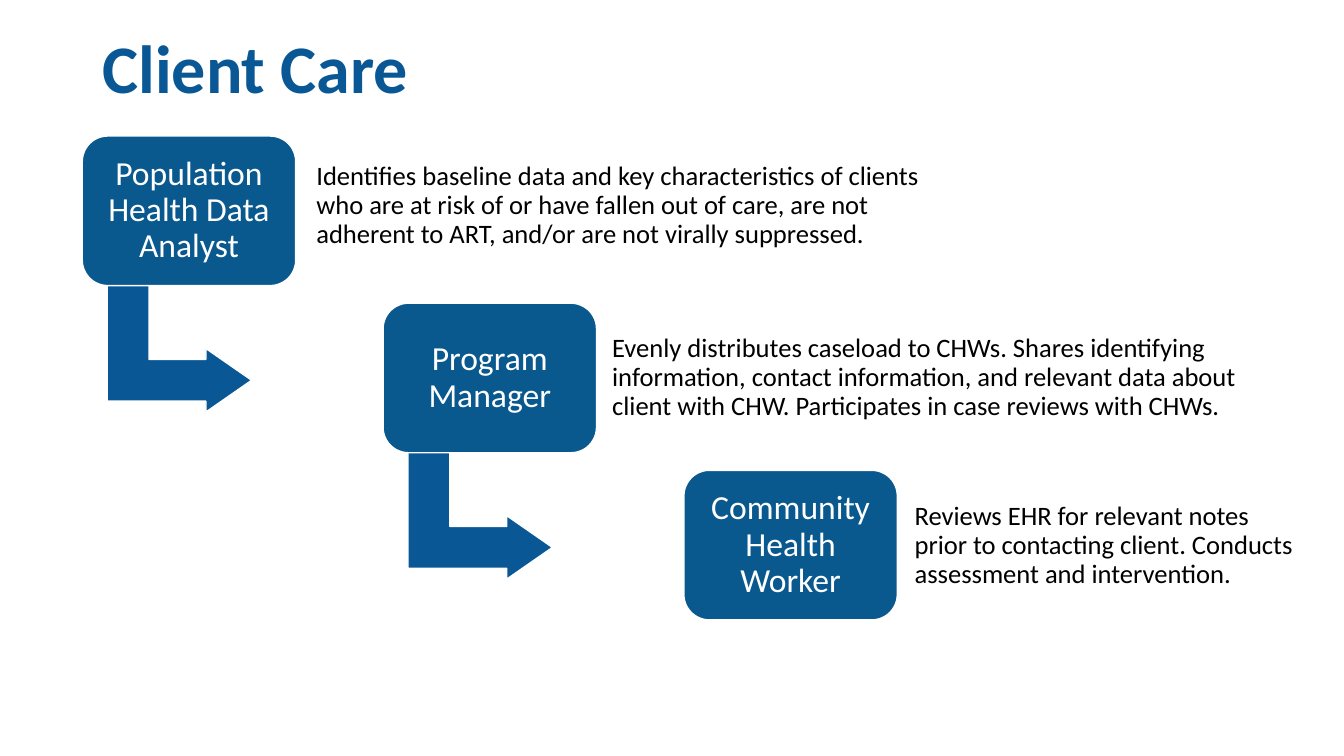
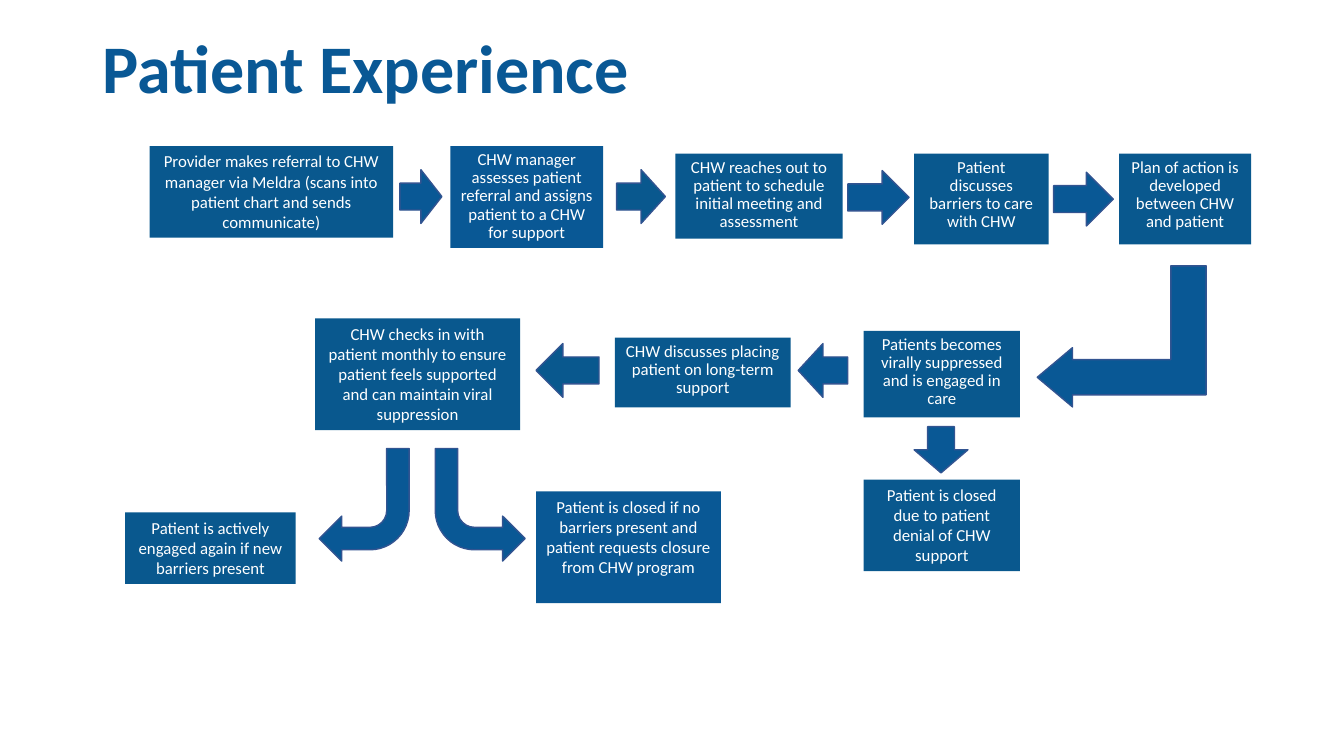
from pptx import Presentation
from pptx.dml.color import RGBColor
from pptx.enum.shapes import MSO_SHAPE as Shape
from pptx.enum.text import MSO_ANCHOR as Anchor, MSO_AUTO_SIZE as AutoSize, PP_ALIGN as Align
from pptx.util import Inches, Pt

BLUE = RGBColor(0x09, 0x58, 0x95)
DEEP_BLUE = RGBColor(0x09, 0x58, 0x8E)
OUTLINE_BLUE = RGBColor(0x32, 0x54, 0x91)
WHITE = RGBColor(0xFF, 0xFF, 0xFF)
BLACK = RGBColor(0x00, 0x00, 0x00)
FONT = "Calibri"

# The slide is a grid of 160 square columns by 90 rows
WIDTH, HEIGHT = Inches(13.33), Inches(7.5)
UNIT = HEIGHT / 90
TITLE_AREA = (11, 3.1, 138, 10.9)
TITLE_ONLY_LAYOUT = 5

# Staircase of roles: each stage sits one step right and down
STAGE_LEFT, STAGE_TOP = 9.8, 16.2
STAGE_WIDTH, STAGE_HEIGHT = 25.4, 17.8
STEP_X, STEP_Y = 35.8, 19.9
ROLES = [
    ("Population Health Data Analyst", (36.7, 17.3, 75.6, 14.4),
     "Identifies baseline data and key characteristics of clients who are at "
     "risk of or have fallen out of care, are not adherent to ART, and/or are "
     "not virally suppressed."),
    ("Program Manager", (71.9, 37.8, 79.6, 14.4),
     "Evenly distributes caseload to CHWs. Shares identifying information, "
     "contact information, and relevant data about client with CHW. "
     "Participates in case reviews with CHWs."),
    ("Community Health Worker", (107.9, 57.8, 48, 14.4),
     "Reviews EHR for relevant notes prior to contacting client. Conducts "
     "assessment and intervention."),
]

# Patient steps: area, fill, line spacing, text
PATIENT_STEPS = [
    ((17.8, 17.4, 29, 10.9), DEEP_BLUE, 1.0,
     "Provider makes referral to CHW manager via Meldra (scans into patient "
     "chart and sends communicate)"),
    ((53.6, 17.4, 18.2, 12.1), BLUE, 0.9,
     "CHW manager assesses patient referral and assigns patient to a CHW for support"),
    ((80.4, 18.3, 19.9, 10.1), DEEP_BLUE, 0.9,
     "CHW reaches out to patient to schedule initial meeting and assessment"),
    ((108.8, 18.3, 16, 10.8), DEEP_BLUE, 0.9,
     "Patient discusses barriers to care with CHW"),
    ((133.2, 18.3, 15.7, 10.8), DEEP_BLUE, 0.9,
     "Plan of action is developed between CHW and patient"),
    ((102.8, 39.4, 18.6, 10.3), DEEP_BLUE, 0.9,
     "Patients becomes virally suppressed and is engaged in care"),
    ((73.2, 40.2, 20.9, 8.3), DEEP_BLUE, 0.9,
     "CHW discusses placing patient on long-term support"),
    ((37.5, 37.9, 24.4, 13.3), DEEP_BLUE, 1.0,
     "CHW checks in with patient monthly to ensure patient feels supported "
     "and can maintain viral suppression"),
    ((102.8, 57.1, 18.6, 10.9), DEEP_BLUE, 1.0,
     "Patient is closed due to patient denial of CHW support"),
    ((63.8, 58.5, 22, 13.3), BLUE, 1.0,
     "Patient is closed if no barriers present and patient requests closure "
     "from CHW program"),
    ((14.9, 61, 20.3, 8.5), DEEP_BLUE, 1.0,
     "Patient is actively engaged again if new barriers present"),
]

# Straight block arrows: kind, area, fill
STRAIGHT_ARROWS = [
    (Shape.RIGHT_ARROW, (47.6, 20.2, 5, 6.4), BLUE),
    (Shape.RIGHT_ARROW, (73.4, 20.2, 5.8, 6.4), DEEP_BLUE),
    (Shape.RIGHT_ARROW, (100.9, 20.3, 7.3, 6.4), BLUE),
    (Shape.RIGHT_ARROW, (125.4, 20.5, 7.1, 6.4), BLUE),
    (Shape.LEFT_ARROW, (95, 40.9, 5.9, 6.4), BLUE),
    (Shape.LEFT_ARROW, (63.8, 40.9, 7.5, 6.4), DEEP_BLUE),
    (Shape.DOWN_ARROW, (108.8, 50.8, 6.4, 5.5), BLUE),
]


def grid(area):
    """Turn left, top, width and height in grid units into lengths."""
    return [round(value * UNIT) for value in area]


def write_text(shape, text, size, color, bold=False, align=Align.LEFT,
               anchor=Anchor.MIDDLE, spacing=0.9, insets=(0.1, 0.05)):
    """Fill a shape with one formatted paragraph; insets are side and top."""
    frame = shape.text_frame
    frame.word_wrap = True
    frame.auto_size = AutoSize.NONE
    frame.vertical_anchor = anchor
    frame.margin_left = frame.margin_right = Inches(insets[0])
    frame.margin_top = frame.margin_bottom = Inches(insets[1])
    frame.text = text
    paragraph = frame.paragraphs[0]
    paragraph.alignment = align
    paragraph.line_spacing = spacing
    font = paragraph.runs[0].font
    font.name, font.size, font.bold = FONT, Pt(size), bold
    font.color.rgb = color


def add_block(slide, kind, area, fill, line=None, adjustments=()):
    """Add a flat filled preset shape, outlined if a line colour is given."""
    shape = slide.shapes.add_shape(kind, *grid(area))
    shape.shadow.inherit = False
    shape.fill.solid()
    shape.fill.fore_color.rgb = fill
    if line is None:
        shape.line.fill.background()
    else:
        shape.line.color.rgb = line
        shape.line.width = Pt(1)
    for index, value in enumerate(adjustments):
        shape.adjustments[index] = value
    return shape


def flip(shape, *axes):
    """Mirror a shape along the named axes, H or V."""
    for axis in axes:
        shape.element.spPr.xfrm.set("flip" + axis, "1")


def add_titled_slide(presentation, text):
    slide = presentation.slides.add_slide(presentation.slide_layouts[TITLE_ONLY_LAYOUT])
    title = slide.shapes.title
    title.left, title.top, title.width, title.height = grid(TITLE_AREA)
    write_text(title, text, 48.6, BLUE, bold=True)
    return slide


def add_role(slide, index, name, description_area, description):
    """Add one stage of the staircase with its description."""
    left, top = STAGE_LEFT + index * STEP_X, STAGE_TOP + index * STEP_Y
    if index < len(ROLES) - 1:
        arrow = add_block(slide, Shape.BENT_UP_ARROW, (left + 4, top + 16.7, 15.1, 17.2),
                          BLUE, WHITE, (0.33, 0.25, 0.36))
        arrow.rotation = 90
    stage = add_block(slide, Shape.ROUNDED_RECTANGLE,
                      (left, top, STAGE_WIDTH, STAGE_HEIGHT), DEEP_BLUE, WHITE, (0.17,))
    write_text(stage, name, 24, WHITE, align=Align.CENTER, insets=(0.12, 0.12))
    box = slide.shapes.add_textbox(*grid(description_area))
    write_text(box, description, 19, BLACK, insets=(0.08, 0.08))


def build_client_care(presentation):
    slide = add_titled_slide(presentation, "Client Care")
    for index, role in enumerate(ROLES):
        add_role(slide, index, *role)


def build_patient_experience(presentation):
    slide = add_titled_slide(presentation, "Patient Experience")
    for area, fill, spacing, text in PATIENT_STEPS:
        step = add_block(slide, Shape.RECTANGLE, area, fill)
        write_text(step, text, 12, WHITE, align=Align.CENTER, anchor=Anchor.TOP,
                   spacing=spacing)
    for kind, area, fill in STRAIGHT_ARROWS:
        add_block(slide, kind, area, fill, OUTLINE_BLUE)

    # Curved arrows that part after the monthly check-in
    for left, axes in ((51.8, "V"), (38, "HV")):
        curved = add_block(slide, Shape.BENT_ARROW, (left, 53.4, 10.7, 13.4),
                           BLUE, OUTLINE_BLUE)
        flip(curved, *axes)

    # Turn from the first row down to the second
    turn = add_block(slide, Shape.BENT_UP_ARROW, (125.1, 30, 16.8, 20.1),
                     BLUE, OUTLINE_BLUE, (0.25, 0.21, 0.25))
    turn.rotation = 90
    flip(turn, "V")


def main():
    presentation = Presentation()
    presentation.slide_width, presentation.slide_height = WIDTH, HEIGHT
    build_client_care(presentation)
    build_patient_experience(presentation)
    presentation.save("out.pptx")


if __name__ == "__main__":
    main()
